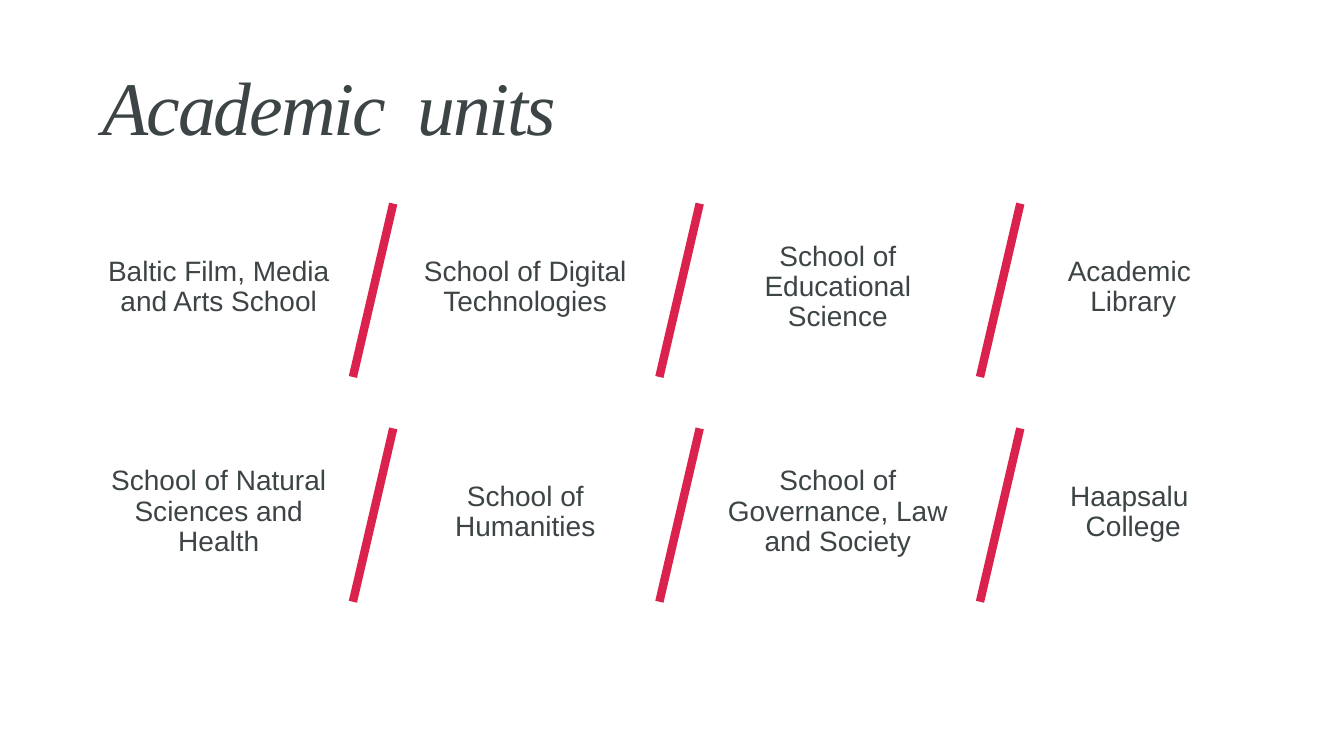
import pptx
import pptx.dml.color
import pptx.enum.shapes
import pptx.enum.text
import pptx.oxml
import pptx.oxml.ns
import pptx.util

Inches = pptx.util.Inches
Pt = pptx.util.Pt
Align = pptx.enum.text.PP_ALIGN

SLATE = pptx.dml.color.RGBColor(0x3C, 0x44, 0x45)
CRIMSON = pptx.dml.color.RGBColor(0xDB, 0x22, 0x4C)

UNITS = [
    ["Baltic Film, Media and Arts School", "School of Digital Technologies",
     "School of Educational Science", "Academic \vLibrary"],
    ["School of Natural Sciences and Health", "School of Humanities",
     "School of Governance, Law and Society", "Haapsalu \vCollege"],
]
UNIT_LEFTS = [0.85, 3.89, 6.99, 9.92]
SLASH_LEFTS = [3.5, 6.54, 9.72]
ROW_TOP, ROW_STEP = 2.02, 2.23


class UnitsPage:
    title_font = "Times New Roman"
    body_font = "Arial"

    def __init__(self, deck):
        self.page = deck.slides.add_slide(deck.slide_layouts[6])

    def text(self, words, left, top, width, height, font, size, line_spacing, align):
        box = self.page.shapes.add_textbox(
            Inches(left), Inches(top), Inches(width), Inches(height))
        frame = box.text_frame
        frame.word_wrap = True
        frame.vertical_anchor = pptx.enum.text.MSO_ANCHOR.MIDDLE
        frame.text = words
        para = frame.paragraphs[0]
        para.alignment = align
        para.line_spacing = line_spacing
        span = para.runs[0]
        for span in para.runs:
            span.font.name = font
            span.font.size = Pt(size)
            span.font.color.rgb = SLATE
        return span

    def title(self, words):
        span = self.text(words, 0.92, 0.4, 11.5, 1.45,
                         self.title_font, 54, 0.8, Align.LEFT)
        span.font.italic = True
        span._r.get_or_add_rPr().set("spc", "-150")

    def unit(self, name, left, top):
        self.text(name, left, top, 2.64, 1.42, self.body_font, 20, 0.9, Align.CENTER)

    def slash(self, left, top):
        line = self.page.shapes.add_connector(
            pptx.enum.shapes.MSO_CONNECTOR.STRAIGHT,
            Inches(left + 0.4), Inches(top), Inches(left), Inches(top + 1.72))
        line.line.color.rgb = CRIMSON
        line.line.width = Pt(6)
        line._element.spPr.append(
            pptx.oxml.parse_xml("<a:effectLst %s/>" % pptx.oxml.ns.nsdecls("a")))


def main():
    deck = pptx.Presentation()
    deck.slide_width = Inches(13.33)
    deck.slide_height = Inches(7.5)
    page = UnitsPage(deck)

    # Heading
    page.title("Academic  units")

    # Two rows of units with slashes between them
    for row, names in enumerate(UNITS):
        top = ROW_TOP + row * ROW_STEP
        for left in SLASH_LEFTS:
            page.slash(left, top)
        for name, left in zip(names, UNIT_LEFTS):
            page.unit(name, left, top + 0.12)

    deck.save("out.pptx")


if __name__ == "__main__":
    main()
